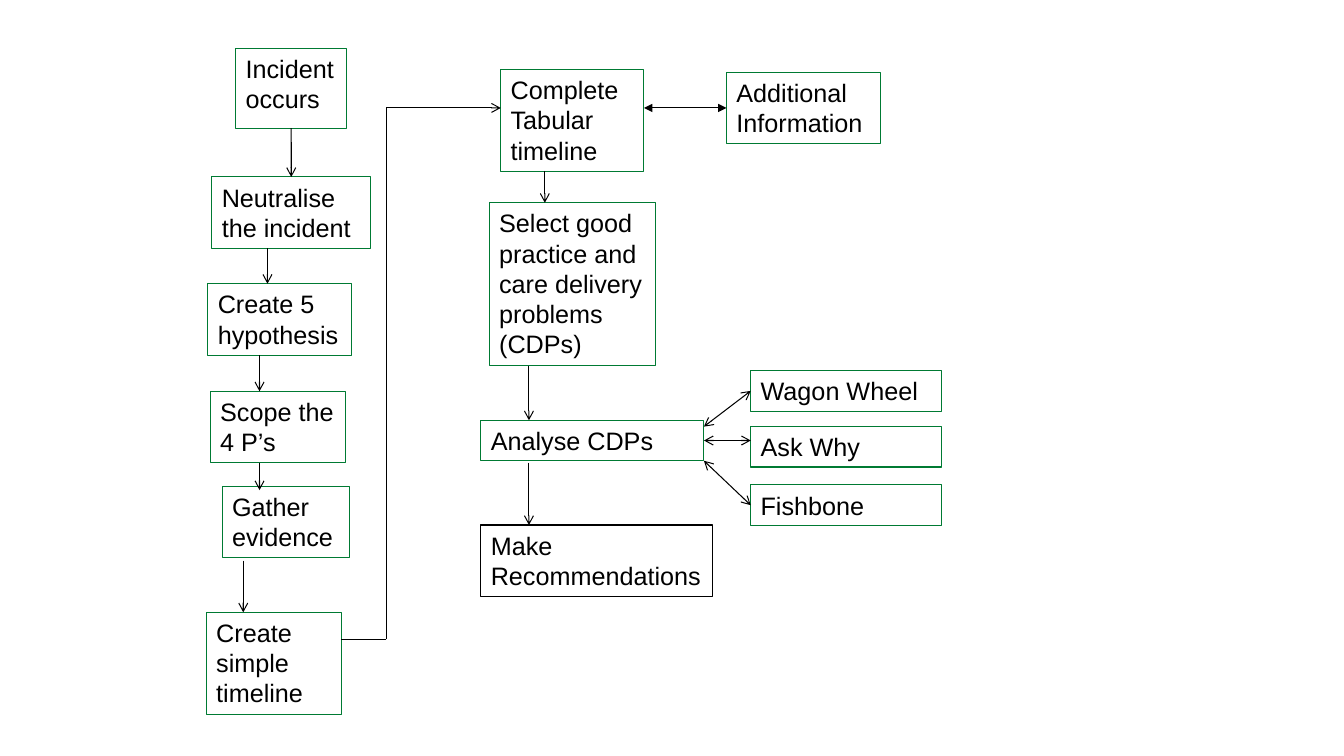
from lxml.etree import SubElement
from pptx import Presentation
from pptx.dml.color import RGBColor
from pptx.enum.shapes import MSO_CONNECTOR, MSO_SHAPE
from pptx.enum.text import MSO_ANCHOR, PP_ALIGN
from pptx.oxml.ns import qn
from pptx.util import Cm, Pt

COLOURS = {"green": "007A33", "black": "000000"}
FONT = "Arial"
TOP, LEFT, BOTTOM, RIGHT = range(4)
ONE_LINE, TWO_LINES, THREE_LINES = 1.02, 1.8, 2.57
TOOL_LEFT, TOOL_WIDTH = 18.92, 4.82

# Boxes: name -> (text, left, top, width, height, outline), in cm
BOXES = {
    "incident": ("Incident occurs", 5.94, 1.22, 2.8, 2.01, "green"),
    "neutralise": ("Neutralise the incident", 5.34, 4.46, 4, TWO_LINES, "green"),
    "hypothesis": ("Create 5 hypothesis", 5.24, 7.15, 3.61, TWO_LINES, "green"),
    "scope": ("Scope the 4 P’s", 5.3, 9.86, 3.41, TWO_LINES, "green"),
    "evidence": ("Gather evidence", 5.6, 12.26, 3.2, TWO_LINES, "green"),
    "simple": ("Create simple timeline", 5.2, 15.43, 3.4, THREE_LINES, "green"),
    "tabular": ("Complete Tabular timeline", 12.62, 1.75, 3.61, THREE_LINES, "green"),
    "select": ("Select good practice and care delivery problems (CDPs)",
               12.33, 5.11, 4.2, 4.11, "green"),
    "analyse": ("Analyse CDPs", 12.12, 10.59, 5.62, ONE_LINE, "green"),
    "wagon": ("Wagon Wheel", TOOL_LEFT, 9.34, TOOL_WIDTH, ONE_LINE, "green"),
    "why": ("Ask Why", TOOL_LEFT, 10.75, TOOL_WIDTH, ONE_LINE, "green"),
    "fishbone": ("Fishbone", TOOL_LEFT, 12.22, TOOL_WIDTH, ONE_LINE, "green"),
    "recommend": ("Make Recommendations", 12.12, 13.23, 5.84, TWO_LINES, "black"),
    "additional": ("Additional Information", 18.31, 1.82, 3.88, TWO_LINES, "green"),
}

# Lines: (start, end, start arrowhead, end arrowhead)
# An end is a point in cm or a box name with the side it joins
LINES = [
    (("incident", BOTTOM), ("neutralise", TOP), None, "arrow"),
    ((6.74, 6.26), (6.74, 7.15), None, "arrow"),
    ((6.54, 8.95), (6.54, 9.86), None, "arrow"),
    ((6.54, 11.66), (6.54, 12.35), None, "arrow"),
    ((6.13, 14.13), (6.13, 15.43), None, "arrow"),
    ((8.6, 16.11), (9.73, 16.11), None, None),
    ((9.73, 16.11), (9.73, 2.72), None, None),
    ((9.73, 2.72), (12.62, 2.72), None, "arrow"),
    ((13.73, 4.32), (13.73, 5.11), None, "arrow"),
    ((13.33, 9.22), (13.33, 10.59), None, "arrow"),
    ((17.74, 10.75), ("wagon", LEFT), "arrow", "arrow"),
    (("analyse", RIGHT), (TOOL_LEFT, 11.1), "arrow", "arrow"),
    ((17.74, 11.61), ("fishbone", LEFT), "arrow", "arrow"),
    ((13.33, 11.66), (13.33, 13.23), None, "arrow"),
    ((16.23, 2.72), ("additional", LEFT), "triangle", "triangle"),
]


def colour(name):
    return RGBColor.from_string(COLOURS[name])


def add_box(page, text, left, top, width, height, outline):
    box = page.shapes.add_shape(
        MSO_SHAPE.RECTANGLE, Cm(left), Cm(top), Cm(width), Cm(height))
    box.shadow.inherit = False
    box.fill.background()
    box.line.color.rgb = colour(outline)
    box.line.width = Pt(0.75)
    frame = box.text_frame
    frame.word_wrap = True
    frame.vertical_anchor = MSO_ANCHOR.TOP
    frame.text = text
    para = frame.paragraphs[0]
    para.alignment = PP_ALIGN.LEFT
    font = para.runs[0].font
    font.name, font.size = FONT, Pt(18)
    font.color.rgb = colour("black")
    return box


def add_line(page, boxes, start, end, start_head, end_head):
    line = page.shapes.add_connector(MSO_CONNECTOR.STRAIGHT, 0, 0, 0, 0)
    if start[0] in boxes:
        line.begin_connect(boxes[start[0]], start[1])
    else:
        line.begin_x, line.begin_y = Cm(start[0]), Cm(start[1])
    if end[0] in boxes:
        line.end_connect(boxes[end[0]], end[1])
    else:
        line.end_x, line.end_y = Cm(end[0]), Cm(end[1])
    line.line.color.rgb = colour("black")
    line.line.width = Pt(0.75)
    outline = line.line._get_or_add_ln()
    for tag, head in (("a:headEnd", start_head), ("a:tailEnd", end_head)):
        if head:
            SubElement(outline, qn(tag), type=head)
    SubElement(line._element.spPr, qn("a:effectLst"))


def main():
    deck = Presentation()
    deck.slide_width, deck.slide_height = Cm(33.87), Cm(19.05)
    page = deck.slides.add_slide(deck.slide_layouts[6])
    boxes = {name: add_box(page, *details) for name, details in BOXES.items()}
    for details in LINES:
        add_line(page, boxes, *details)
    deck.save("out.pptx")


if __name__ == "__main__":
    main()
